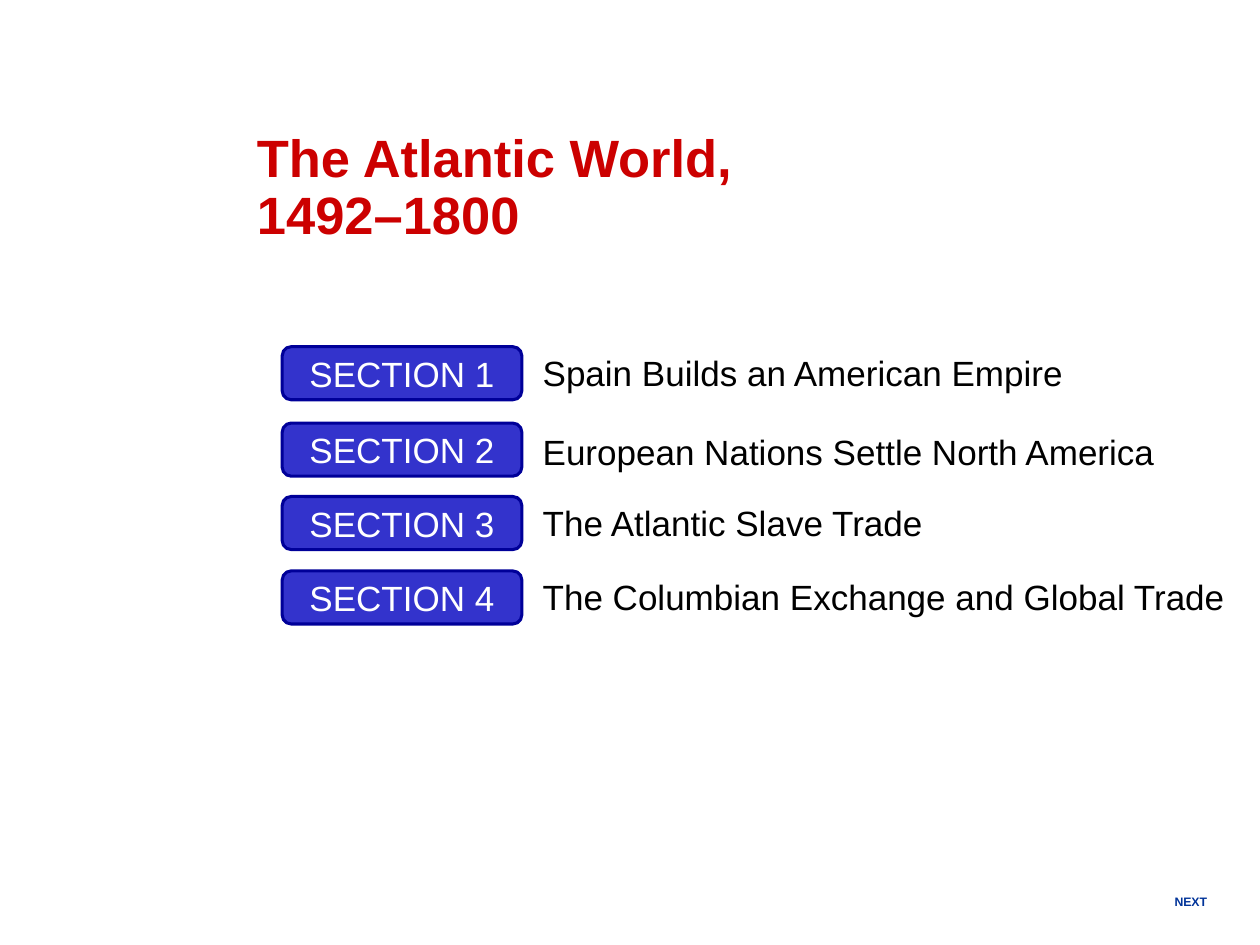
from pptx import Presentation
from pptx.dml.color import RGBColor
from pptx.enum.shapes import MSO_SHAPE as Shape
from pptx.enum.text import MSO_ANCHOR as Anchor, MSO_AUTO_SIZE as AutoSize, PP_ALIGN as Align
from pptx.util import Cm, Pt

# Content
TITLE = ["The Atlantic World,", "1492–1800"]
NEXT_LABEL = "NEXT"
# Section name, its width, top of its badge, top of its name (cm)
SECTIONS = [
    ("Spain Builds an American Empire", 11.23, 6.99, 6.96),
    ("European Nations Settle North America", 13.06, 8.53, 8.56),
    ("The Atlantic Slave Trade", 8.43, 10.01, 9.98),
    ("The Columbian Exchange and Global Trade", 14.48, 11.51, 11.48),
]

# Style
FONT = "Arial"
COLORS = {"title": "CC0000", "badge": "3333CC", "border": "000099",
          "badge_text": "FFFFFF", "name": "000000", "next": "003399"}
BADGE_LEFT, BADGE_WIDTH, BADGE_HEIGHT = 5.69, 4.83, 1.07
NAME_LEFT, NAME_HEIGHT = 10.69, 1.09


def color(key):
    return RGBColor.from_string(COLORS[key])


def write(frame, lines, size, color_key, bold=False, align=Align.LEFT, spacing=None):
    frame.word_wrap = False
    frame.text = "\n".join(lines)
    for paragraph in frame.paragraphs:
        paragraph.alignment = align
        paragraph.line_spacing = spacing
        for run in paragraph.runs:
            run.font.name = FONT
            run.font.size = Pt(size)
            run.font.bold = bold
            run.font.color.rgb = color(color_key)


def add_label(slide, box, lines, size, color_key, **style):
    frame = slide.shapes.add_textbox(*map(Cm, box)).text_frame
    write(frame, lines, size, color_key, **style)
    frame.auto_size = AutoSize.SHAPE_TO_FIT_TEXT


def add_badge(slide, top, label):
    badge = slide.shapes.add_shape(
        Shape.ROUNDED_RECTANGLE, Cm(BADGE_LEFT), Cm(top), Cm(BADGE_WIDTH), Cm(BADGE_HEIGHT))
    badge.shadow.inherit = False
    badge.adjustments[0] = 0.17
    badge.fill.solid()
    badge.fill.fore_color.rgb = color("badge")
    badge.line.color.rgb = color("border")
    badge.line.width = Pt(1.75)
    badge.text_frame.vertical_anchor = Anchor.MIDDLE
    write(badge.text_frame, [label], 20, "badge_text", align=Align.CENTER)


def main():
    deck = Presentation()
    deck.slide_width, deck.slide_height = Cm(25.4), Cm(19.05)
    slide = deck.slides.add_slide(deck.slide_layouts[6])

    # Chapter title
    add_label(slide, (4.93, 2.54, 10.16, 2.54), TITLE, 30, "title", bold=True, spacing=0.9)

    # Section badges and names
    for number, (name, width, badge_top, name_top) in enumerate(SECTIONS, 1):
        add_badge(slide, badge_top, f"SECTION {number}")
        add_label(slide, (NAME_LEFT, name_top, width, NAME_HEIGHT), [name], 20, "name")

    # Navigation label
    add_label(slide, (23.42, 17.91, 1.17, 0.56), [NEXT_LABEL], 7, "next",
              bold=True, align=Align.CENTER)

    deck.save("out.pptx")


if __name__ == "__main__":
    main()
